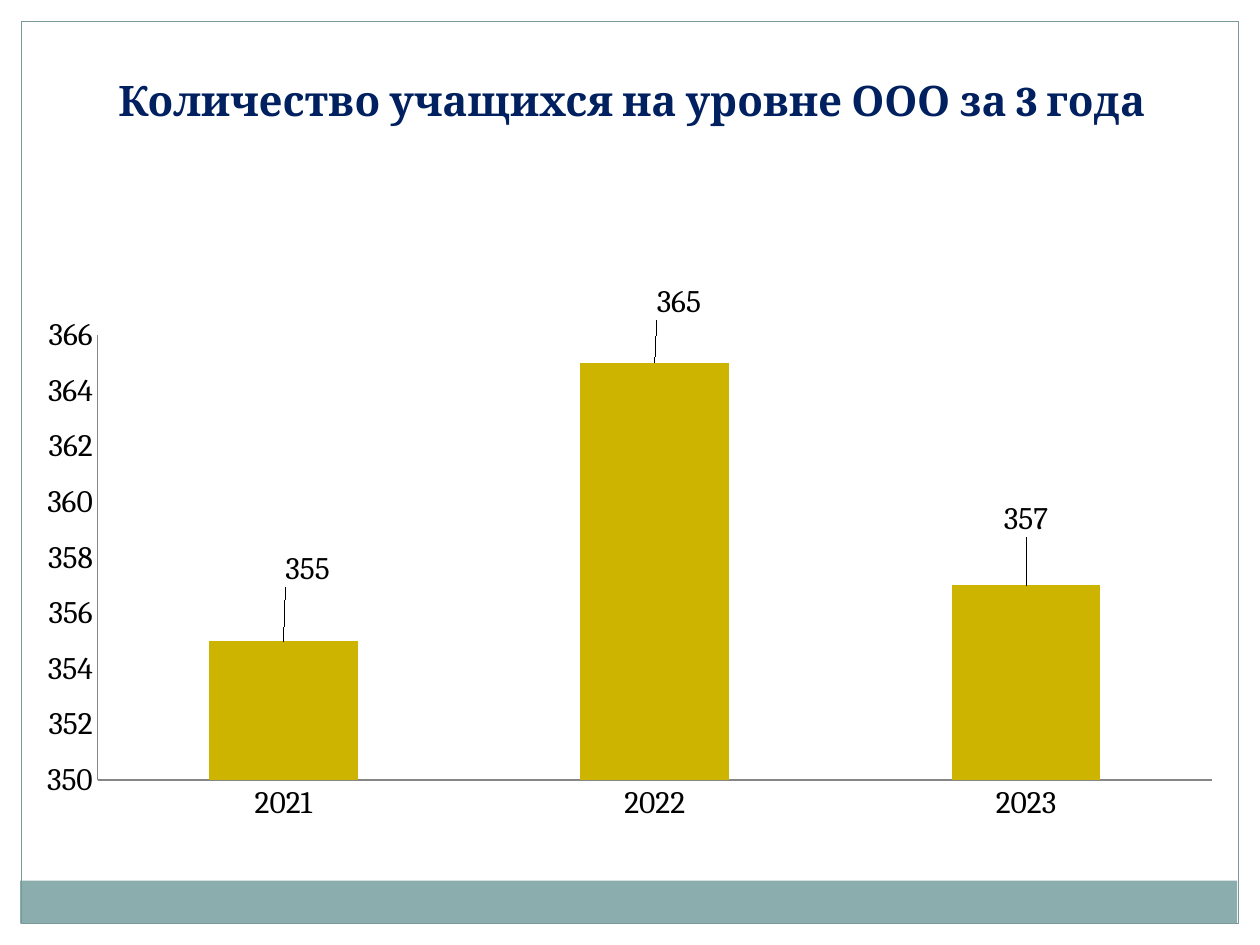
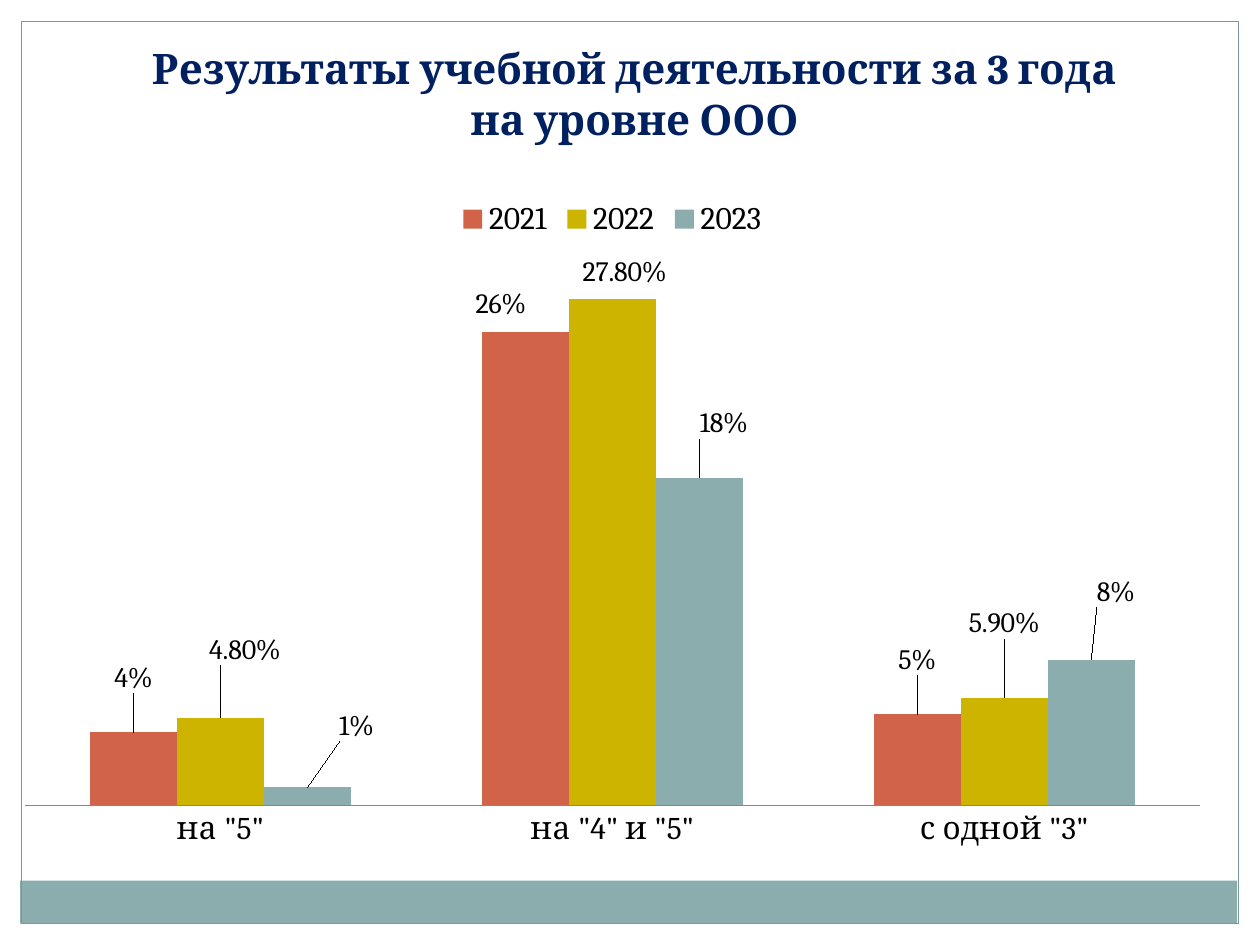
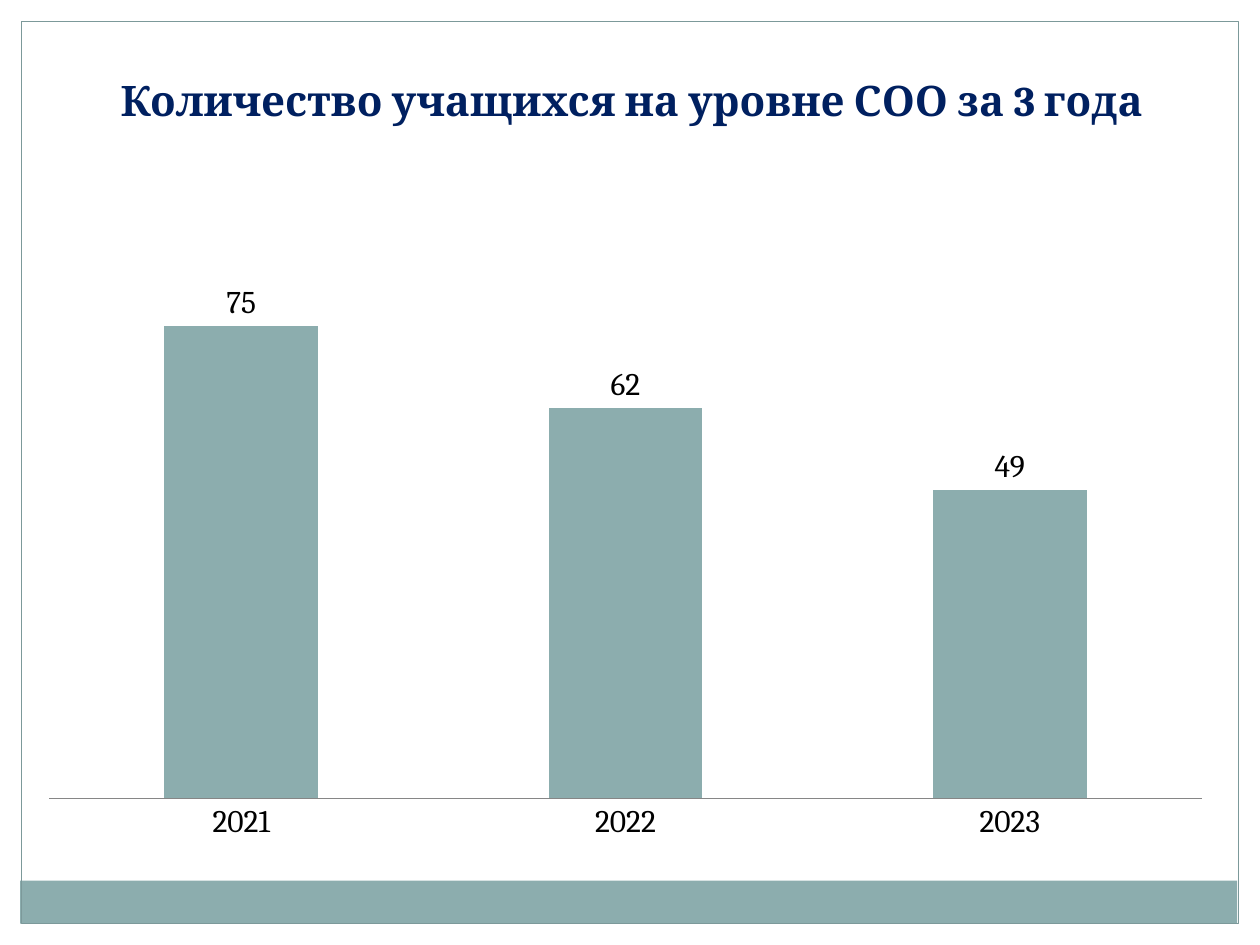
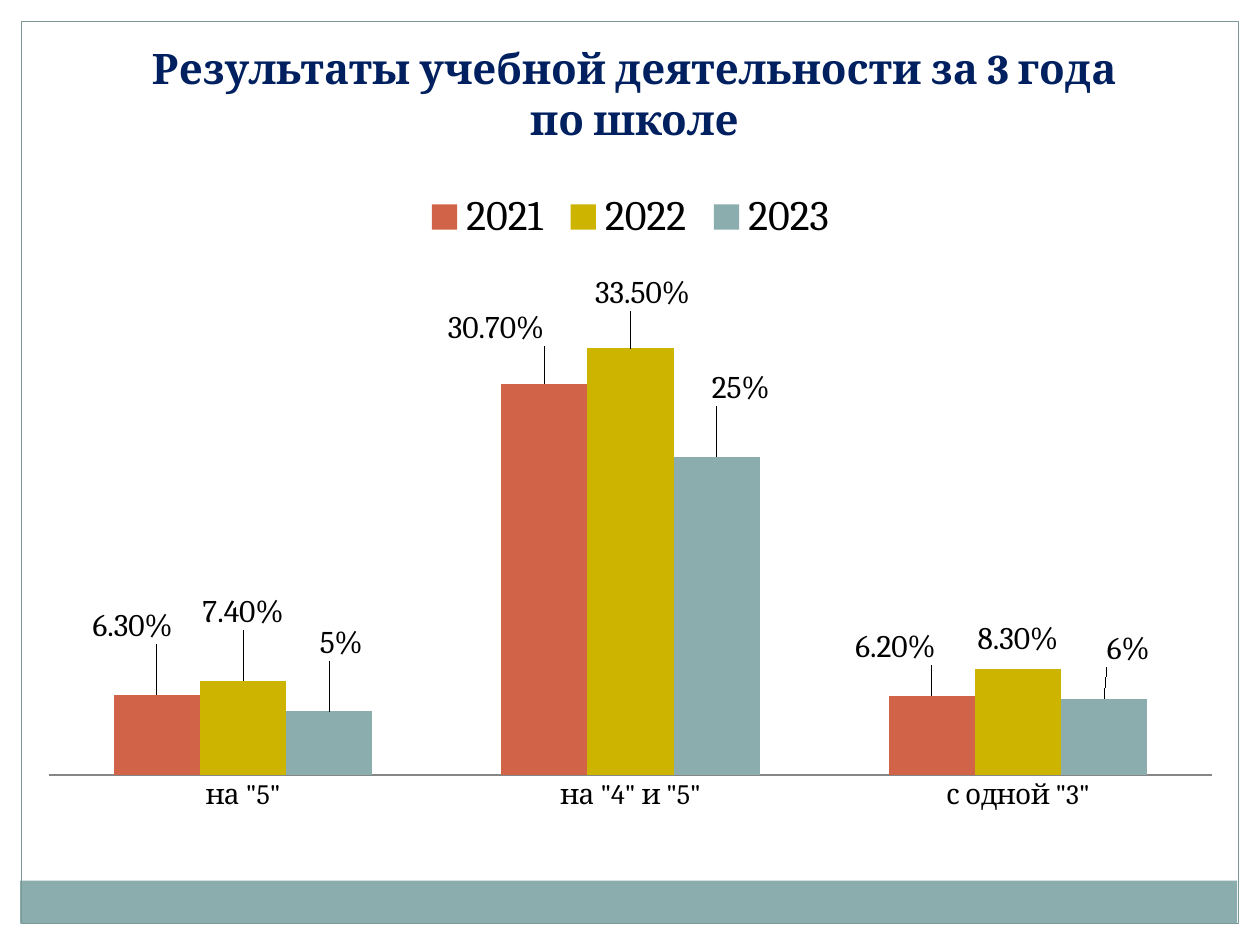
from copy import deepcopy
from dataclasses import dataclass

from lxml import etree
from pptx import Presentation
from pptx.chart.data import CategoryChartData
from pptx.dml.color import RGBColor
from pptx.enum.chart import (XL_CHART_TYPE, XL_LABEL_POSITION,
                             XL_LEGEND_POSITION, XL_TICK_MARK)
from pptx.enum.shapes import MSO_SHAPE
from pptx.enum.text import MSO_ANCHOR, MSO_AUTO_SIZE, PP_ALIGN
from pptx.oxml.ns import qn
from pptx.util import Inches, Pt

COLUMN = XL_CHART_TYPE.COLUMN_CLUSTERED
ABOVE = XL_LABEL_POSITION.OUTSIDE_END
NO_TICK = XL_TICK_MARK.NONE
RECT = MSO_SHAPE.RECTANGLE
TOP, BOTTOM = MSO_ANCHOR.TOP, MSO_ANCHOR.BOTTOM
CENTER = PP_ALIGN.CENTER

# Slide grid: 100 columns by 75 rows of square cells
WIDTH, HEIGHT = Inches(10), Inches(7.5)
CELL = WIDTH / 100


@dataclass(frozen=True)
class Theme:
    font: str = "Cambria"
    white: str = "FFFFFF"
    black: str = "000000"
    navy: str = "002060"
    red: str = "D16349"
    gold: str = "CCB400"
    teal: str = "8CADAE"
    edge: str = "7C999A"
    axis: str = "868686"
    title: int = 24
    large: int = 18
    small: int = 16


THEME = Theme()
YEARS = ["2021", "2022", "2023"]
MARKS = ['на "5"', 'на "4" и "5"', 'с одной "3"']
SHADES = [THEME.red, THEME.gold, THEME.teal]


def rgb(code):
    return RGBColor.from_string(code)


def cells(*nums):
    return [round(n * CELL) for n in nums]


# Text
def set_font(font, size, color=THEME.black, bold=False):
    font.name = THEME.font
    font.size = Pt(size)
    font.bold = bold
    font.color.rgb = rgb(color)


def put_text(frame, text, size=THEME.title, color=THEME.navy, bold=True,
             align=CENTER, anchor=TOP):
    frame.word_wrap = True
    frame.auto_size = MSO_AUTO_SIZE.NONE
    frame.vertical_anchor = anchor
    frame.text = text
    for para in frame.paragraphs:
        para.alignment = align
        for run in para.runs:
            set_font(run.font, size, color, bold)


def add_page(deck, text, area, anchor):
    slide = deck.slides.add_slide(deck.slide_layouts[5])
    title = slide.shapes.title
    title.left, title.top, title.width, title.height = cells(*area)
    put_text(title.text_frame, text, anchor=anchor)
    return slide


# Shared frame and bands
def add_bands(deck, slide):
    """Draw the bands, then move them to the master that all slides share."""
    bands = [
        ((0, 0, 100, 1.7), THEME.white, None),
        ((98.3, 0, 1.7, 75), THEME.white, None),
        ((0, 0, 1.7, 75), THEME.white, None),
        ((1.6, 69.9, 96.6, 3.4), THEME.teal, None),
        ((1.7, 1.7, 96.6, 71.6), None, THEME.edge),
    ]
    tree = deck.slide_master.shapes.element
    for num, (area, fill, line) in enumerate(bands, 20):
        band = slide.shapes.add_shape(RECT, *cells(*area))
        band.shadow.inherit = False
        if fill:
            band.fill.solid()
            band.fill.fore_color.rgb = rgb(fill)
        else:
            band.fill.background()
        if line:
            band.line.color.rgb = rgb(line)
            band.line.width = Pt(0.75)
        else:
            band.line.fill.background()
        band.element.xpath("./p:nvSpPr/p:cNvPr")[0].set("id", str(num))
        tree.append(band.element)


# Charts
def make_layout(**parts):
    layout = etree.Element(qn("c:layout"))
    manual = etree.SubElement(layout, qn("c:manualLayout"))
    for name, val in parts.items():
        etree.SubElement(manual, qn("c:" + name)).set("val", str(val))
    return layout


def set_plot(chart, left, top, width, height):
    area = chart.element.find(".//" + qn("c:plotArea"))
    for old in area.findall(qn("c:layout")):
        area.remove(old)
    area.insert(0, make_layout(layoutTarget="inner", xMode="edge",
                               yMode="edge", x=left, y=top,
                               w=width, h=height))


def set_labels(series, size, code, shifts):
    """Label each bar; shifts are shares of the chart's width and height."""
    labels = series.data_labels
    labels.show_value = True
    labels.position = ABOVE
    labels.number_format = code
    labels.number_format_is_linked = False
    set_font(labels.font, size)
    for num, (right, down) in enumerate(shifts):
        label = series.points[num].data_label
        set_font(label.font, size)
        label.position = ABOVE
        group = series.data_labels.element if hasattr(
            labels, "element") else series._element.find(qn("c:dLbls"))
        item = group.findall(qn("c:dLbl"))[num]
        item.insert(1, make_layout(x=right, y=down))
        item.insert(2, deepcopy(group.find(qn("c:numFmt"))))


def set_axes(chart, size, low, high, step, shown):
    base, scale = chart.category_axis, chart.value_axis
    scale.has_major_gridlines = False
    scale.minimum_scale, scale.maximum_scale = low, high
    scale.major_unit = step
    scale.visible = shown
    for axis in (base, scale):
        axis.major_tick_mark = axis.minor_tick_mark = NO_TICK
        axis.format.line.color.rgb = rgb(THEME.axis)
        axis.format.line.width = Pt(0.75)
        set_font(axis.tick_labels.font, size)


def add_bars(slide, area, plot, cats, rows, scale, size=THEME.large,
             tags=THEME.large, legend=None, shown=False, overlap=0):
    """Each row is name, values, colour, number format, label shifts."""
    data = CategoryChartData()
    data.categories = cats
    for name, vals, _, code, _ in rows:
        data.add_series(name, vals, number_format=code)
    chart = slide.shapes.add_chart(COLUMN, *cells(*area), data).chart
    set_font(chart.font, size)
    chart.has_title = False
    chart.has_legend = legend is not None
    if chart.has_legend:
        chart.legend.position = XL_LEGEND_POSITION.TOP
        chart.legend.include_in_layout = False
        set_font(chart.legend.font, legend)
    set_axes(chart, size, *scale, shown)
    bars = chart.plots[0]
    bars.gap_width, bars.overlap = 150, overlap
    bars.vary_by_categories = False
    for series, (_, _, color, code, shifts) in zip(bars.series, rows):
        series.format.fill.solid()
        series.format.fill.fore_color.rgb = rgb(color)
        set_labels(series, tags, code, shifts)
    set_plot(chart, *plot)


# Kinds of slide
def add_count(deck, level, area, plot, vals, color, scale, shifts=(), **look):
    slide = add_page(deck, f"Количество учащихся на уровне {level} за 3 года",
                     (3.5, 2.1, 93.3, 8.3), BOTTOM)
    rows = [("Series 1", vals, color, "General", shifts)]
    add_bars(slide, area, plot, YEARS, rows, scale, **look)
    return slide


def add_marks(deck, scope, area, plot, sets, scale, **look):
    slide = add_page(deck,
                     f"Результаты учебной деятельности за 3 года\n{scope}",
                     (3.5, 2.9, 93.7, 9.1), TOP)
    rows = [(year, vals, shade, code, shifts)
            for year, shade, (vals, code, shifts) in zip(YEARS, SHADES, sets)]
    add_bars(slide, area, plot, MARKS, rows, scale, **look)


def main():
    deck = Presentation()
    deck.slide_width, deck.slide_height = WIDTH, HEIGHT

    # Basic level: pupils
    first = add_count(deck, "ООО", (2, 22.5, 96.1, 43.3),
                      (0.06, 0.09, 0.92, 0.82), (355, 365, 357), THEME.gold,
                      (350, 366, 2),
                      [(0.02, -0.09), (0.02, -0.07), (0, -0.08)], shown=True)
    add_bands(deck, first)

    # Basic level: marks
    add_marks(deck, "на уровне ООО", (0, 14.7, 97.2, 53.5),
              (0.02, 0.11, 0.96, 0.81), [
                  ((0.04, 0.26, 0.05), "0%",
                   [(0, -0.05), (-0.02, -0.01), (0, -0.05)]),
                  ((0.048, 0.278, 0.059), "0.00%",
                   [(0.02, -0.07), (0.01, -0.01), (0, -0.08)]),
                  ((0.01, 0.18, 0.08), "0%",
                   [(0.04, -0.06), (0.02, -0.05), (0.02, -0.07)]),
              ], (0, 0.3, 0.05), tags=THEME.small, legend=THEME.large)

    # Senior level: pupils
    add_count(deck, "СОО", (2, 22.5, 95.3, 44.9), (0.02, 0.02, 0.96, 0.89),
              (75, 62, 49), THEME.teal, (0, 80, 10), overlap=-25)

    # Whole school: marks
    add_marks(deck, "по школе", (2, 13.9, 96.1, 51.2),
              (0.02, 0.14, 0.96, 0.79), [
                  ((0.063, 0.307, 0.062), "0.00%",
                   [(-0.02, -0.07), (-0.04, -0.05), (-0.03, -0.04)]),
                  ((0.074, 0.335, 0.083), "0.00%",
                   [(0, -0.07), (0.01, -0.05), (0, -0.01)]),
                  ((0.05, 0.25, 0.06), "0%",
                   [(0.01, -0.07), (0.02, -0.07), (0.02, -0.04)]),
              ], (0, 0.4, 0.05), size=THEME.small, legend=THEME.title)

    deck.save("out.pptx")


if __name__ == "__main__":
    main()
